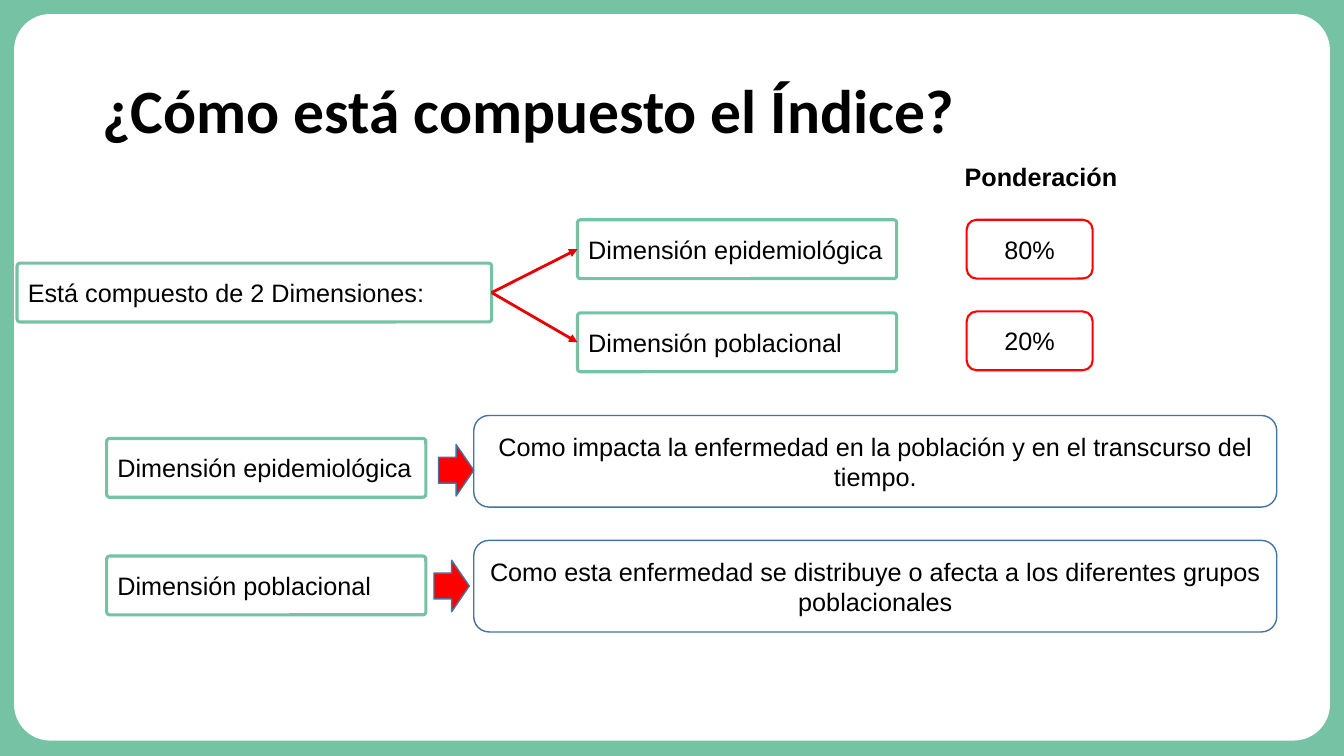
from pptx import Presentation
from pptx.dml.color import RGBColor
from pptx.enum import shapes, text
from pptx.oxml.ns import qn
from pptx.util import Pt
from lxml import etree

GREEN = RGBColor(0x76, 0xC2, 0xA5)
RED = RGBColor(0xFF, 0, 0)
CRIMSON = RGBColor(0xE6, 0, 0)
BLUE = RGBColor(0x43, 0x73, 0x9E)
BLACK = RGBColor(0, 0, 0)
WHITE = RGBColor(0xFF, 0xFF, 0xFF)

ROUND = shapes.MSO_SHAPE.ROUNDED_RECTANGLE
ARROW = shapes.MSO_SHAPE.RIGHT_ARROW
LEFT, RIGHT = 1, 3  # connection sites of a rounded rectangle
NAMES = ("Dimensión epidemiológica", "Dimensión poblacional")


def write(frame, words, align, size=18, font="Arial", bold=False):
    para = frame.paragraphs[0]
    para.alignment = align
    run = para.add_run()
    run.text = words
    run.font.name = font
    run.font.size = Pt(size)
    run.font.bold = bold
    run.font.color.rgb = BLACK
    return para


def add_shape(slide, kind, box, fill=None, line=None, width=1):
    shape = slide.shapes.add_shape(kind, *map(Pt, box))
    shape.shadow.inherit = False
    if fill is None:
        shape.fill.background()
    else:
        shape.fill.solid()
        shape.fill.fore_color.rgb = fill
    if line is None:
        shape.line.fill.background()
    else:
        shape.line.color.rgb = line
        shape.line.width = Pt(width)
    return shape


def add_box(slide, box, words, line, width, align=text.PP_ALIGN.CENTER):
    shape = add_shape(slide, ROUND, box, line=line, width=width)
    frame = shape.text_frame
    frame.word_wrap = True
    frame.vertical_anchor = text.MSO_ANCHOR.MIDDLE
    write(frame, words, align)
    return shape


def add_label(slide, left, top, words, wide=228):
    shape = add_box(slide, (left, top, wide, 42), words, GREEN, 2.25,
                    text.PP_ALIGN.JUSTIFY)
    shape.adjustments[0] = 0.05
    return shape


def add_link(slide, start, end):
    """Draw an arrow from the right side of start to the left side of end."""
    link = slide.shapes.add_connector(shapes.MSO_CONNECTOR.STRAIGHT, 0, 0, 0, 0)
    link.begin_connect(start, RIGHT)
    link.end_connect(end, LEFT)
    link.line.color.rgb = CRIMSON
    link.line.width = Pt(2)
    etree.SubElement(link.line._get_or_add_ln(), qn("a:tailEnd"), type="triangle")
    etree.SubElement(link._element.spPr, qn("a:effectLst"))


def add_title(slide, words):
    title = slide.shapes.title
    title.left, title.top, title.width, title.height = map(Pt, (66, 29, 828, 104))
    title.text_frame.vertical_anchor = text.MSO_ANCHOR.MIDDLE
    para = write(title.text_frame, words, text.PP_ALIGN.LEFT, 44, "Calibri", True)
    para.line_spacing = 0.9


def add_panel(slide):
    """Lay the white panel behind the title on the green background."""
    slide.background.fill.solid()
    slide.background.fill.fore_color.rgb = GREEN
    panel = add_shape(slide, ROUND, (10, 10, 940, 519), fill=WHITE)
    panel.adjustments[0] = 0.05
    slide.shapes.title.element.addprevious(panel.element)


def add_head(slide, words):
    head = slide.shapes.add_textbox(*map(Pt, (682, 111.6, 125, 29)))
    head.text_frame.word_wrap = False
    write(head.text_frame, words, text.PP_ALIGN.LEFT, bold=True)


def main():
    deck = Presentation()
    deck.slide_width, deck.slide_height = Pt(960), Pt(540)
    slide = deck.slides.add_slide(deck.slide_layouts[5])
    add_panel(slide)
    add_title(slide, "¿Cómo está compuesto el Índice?")

    root = add_label(slide, 12.2, 188, "Está compuesto de 2 Dimensiones:", 339)
    add_head(slide, "Ponderación")
    weights = (("80%", 157, 157), ("20%", 223.5, 222.5))
    for name, (share, top, share_top) in zip(NAMES, weights):
        add_link(slide, root, add_label(slide, 412.5, top, name))
        add_box(slide, (690.5, share_top, 90, 42), share, RED, 1.5)

    details = (
        ("Como impacta la enfermedad en la población y en el transcurso del tiempo.",
         313.2, 296.8, (313.2, 317.5)),
        ("Como esta enfermedad se distribuye o afecta a los diferentes grupos "
         "poblacionales", 397.2, 386, (310, 400.2)),
    )
    for name, (words, top, words_top, spot) in zip(NAMES, details):
        add_label(slide, 76.2, top, name)
        add_box(slide, (338.4, words_top, 573.6, 65.4), words, BLUE, 1)
        add_shape(slide, ARROW, (*spot, 25.2, 36.8), fill=RED, line=BLUE)

    deck.save("out.pptx")


if __name__ == "__main__":
    main()
